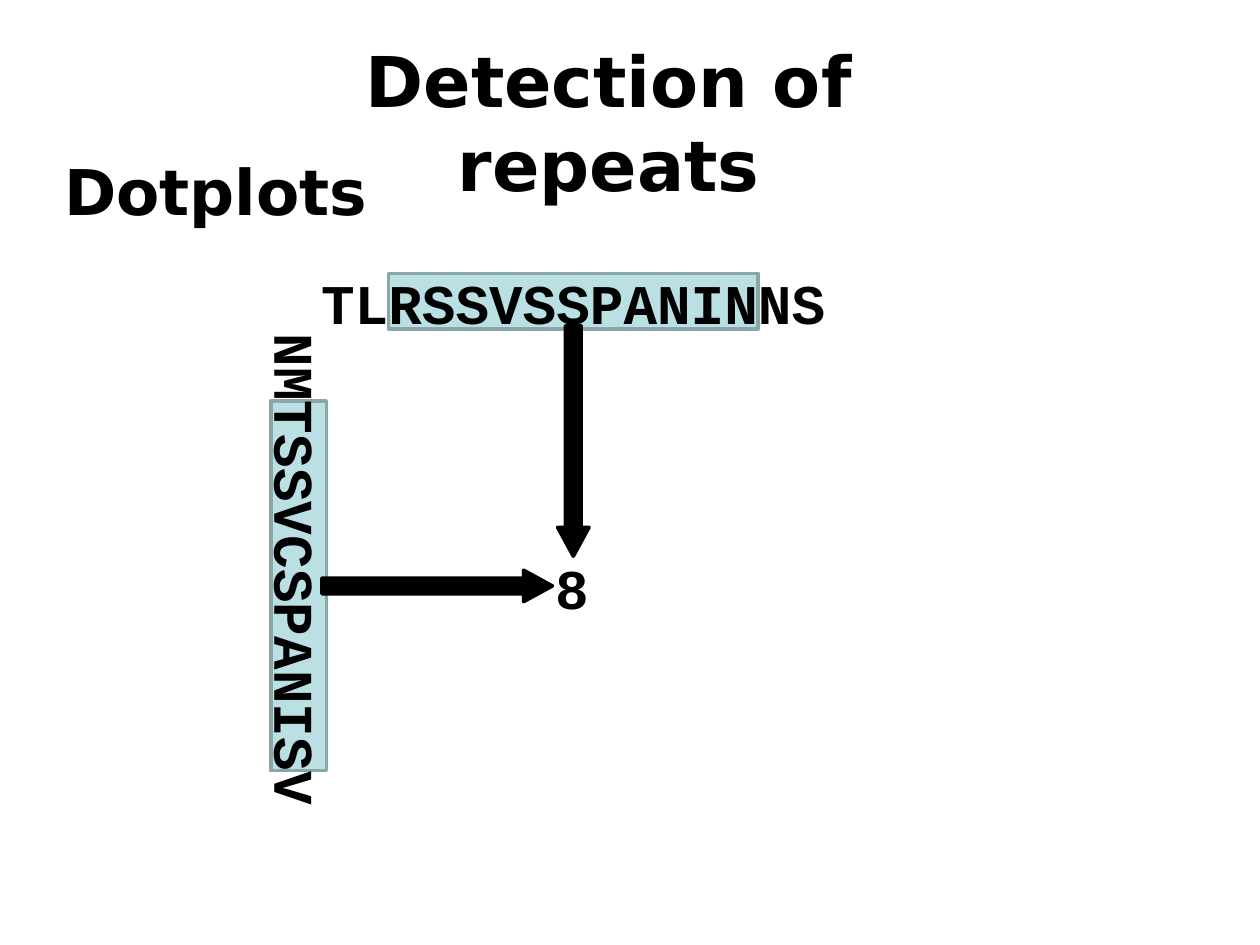
from pptx import Presentation
from pptx.dml.color import RGBColor
from pptx.enum.shapes import MSO_SHAPE
from pptx.enum.text import PP_ALIGN
from pptx.util import Inches, Pt

COLORS = {"text": "000000", "arrow": "000000", "window": "BBE0E3", "edge": "8AA6A8"}
HEADING, MONO = "DejaVu Sans", "Courier New"
SEQ_SIZE = 32
LETTER = SEQ_SIZE * 0.6 / 72  # advance of one monospaced letter, in inches
INSET = 0.1
ROW_X, ROW_Y = 2.55, 2.4      # first letter's left edge and centre line of the row
COL_X, COL_Y = 2.35, 2.65     # centre line and first letter's top edge of the column
SKIP, WINDOW = 2, 11          # letters before the window, letters inside it


def color(name):
    return RGBColor.from_string(COLORS[name])


def centered(cx, cy, w, h):
    """Turn a centre and a size into left, top, width, height."""
    return [Inches(v) for v in (cx - w / 2, cy - h / 2, w, h)]


def add_text(slide, text, box, size, font, align=PP_ALIGN.LEFT, rotation=0):
    sp = slide.shapes.add_textbox(*box)
    sp.rotation = rotation
    tf = sp.text_frame
    tf.word_wrap = True
    tf.text = text
    p = tf.paragraphs[0]
    p.alignment = align
    f = p.runs[0].font
    f.size, f.name, f.bold = Pt(size), font, True
    f.color.rgb = color("text")


def add_sequence(slide, text, start, axis, down=False):
    """Set letters from start along a centre line, with one letter of slack."""
    length = (len(text) + 1) * LETTER
    middle = start + length / 2
    cx, cy = (axis, middle) if down else (middle, axis)
    box = centered(cx, cy, length + 2 * INSET, 0.64)
    add_text(slide, text, box, SEQ_SIZE, MONO, rotation=90 if down else 0)


def add_shape(slide, kind, box, fill, line, rotation=0):
    sp = slide.shapes.add_shape(kind, *box)
    sp.rotation = rotation
    sp.shadow.inherit = False
    sp.fill.solid()
    sp.fill.fore_color.rgb = color(fill)
    sp.line.color.rgb = color(line)
    sp.line.width = Pt(2)
    return sp


def add_window(slide, cx, cy, rotation=0):
    box = centered(cx, cy, WINDOW * LETTER, 0.44)
    add_shape(slide, MSO_SHAPE.RECTANGLE, box, "window", "edge", rotation)


def add_arrow(slide, cx, cy, rotation=0):
    box = centered(cx, cy, 0.25, 1.83)
    sp = add_shape(slide, MSO_SHAPE.DOWN_ARROW, box, "arrow", "arrow", rotation)
    sp.adjustments[0], sp.adjustments[1] = 0.5, 0.915


def main():
    prs = Presentation()
    prs.slide_width, prs.slide_height = Inches(10), Inches(7.5)
    slide = prs.slides.add_slide(prs.slide_layouts[6])

    to_middle = (SKIP + WINDOW / 2) * LETTER
    mid_x, mid_y = ROW_X + to_middle, COL_Y + to_middle

    add_window(slide, COL_X + 0.02, mid_y, rotation=270)
    add_window(slide, mid_x, ROW_Y - 0.01)
    add_text(slide, "Detection of repeats", centered(4.83, 0.95, 6.4, 1.4),
             40, HEADING, PP_ALIGN.CENTER)
    add_text(slide, "Dotplots", centered(4.95, 1.92, 9.08, 1.51), 36, HEADING)
    add_sequence(slide, "TLRSSVSSPANINNS", ROW_X, ROW_Y)
    add_sequence(slide, "NMTSSVCSPANISV", COL_Y, COL_X, down=True)
    add_arrow(slide, 3.47, mid_y, rotation=270)
    add_sequence(slide, "8", mid_x - LETTER / 2 - 0.01, mid_y + 0.01)
    add_arrow(slide, mid_x, 3.5)

    prs.save("out.pptx")


if __name__ == "__main__":
    main()
